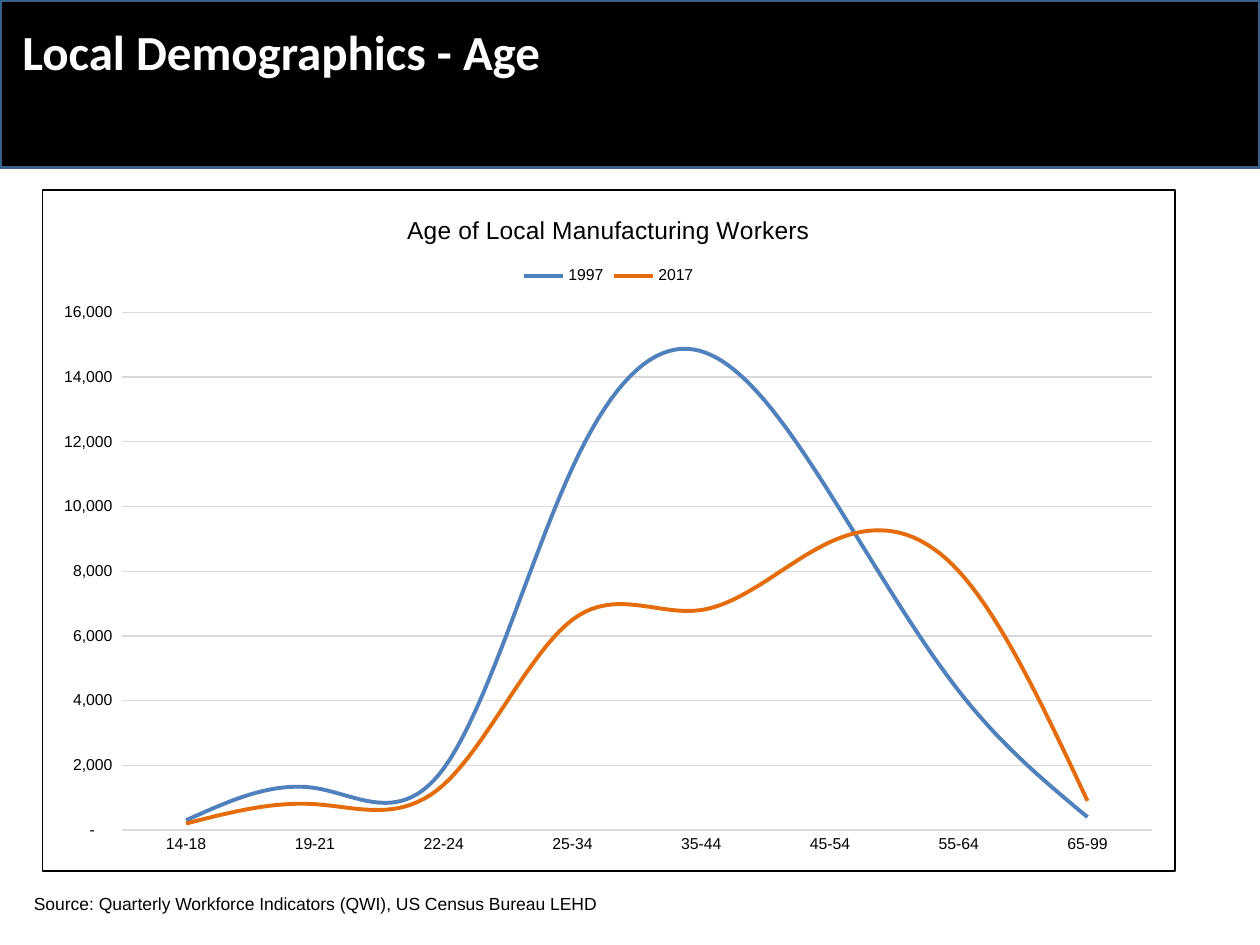
from lxml.etree import SubElement
from pptx import Presentation
from pptx.chart.data import CategoryChartData
from pptx.dml.color import RGBColor
from pptx.enum.chart import XL_CHART_TYPE as ChartType, XL_LEGEND_POSITION as LegendPos
from pptx.enum.chart import XL_MARKER_STYLE as Marker, XL_TICK_MARK as Tick
from pptx.enum.shapes import MSO_SHAPE as Shape
from pptx.enum.text import MSO_ANCHOR as Anchor
from pptx.oxml import parse_xml
from pptx.oxml.ns import nsdecls, qn
from pptx.util import Inches, Pt

COLORS = {"black": "000000", "white": "FFFFFF", "banner_line": "3A5F8C",
          "grid": "D9D9D9", "1997": "4F81BD", "2017": "E46C0A"}
AGES = ["14-18", "19-21", "22-24", "25-34", "35-44", "45-54", "55-64", "65-99"]
WORKERS = {"1997": [300, 1300, 1900, 11200, 14800, 10400, 4300, 400],
           "2017": [200, 800, 1400, 6500, 6800, 8900, 8000, 900]}
COUNT_FORMAT = '_(* #,##0_);_(* \\(#,##0\\);_(* "-"??_);_('
PLOT_LAYOUT = {"x": 0.07, "y": 0.18, "w": 0.91, "h": 0.76}


def rgb(name):
    """Return the named colour."""
    return RGBColor.from_string(COLORS[name])


def set_font(font, size, color="black", name="Arial", bold=False):
    """Apply size, colour, typeface and weight to a font."""
    for attribute, value in {"size": Pt(size), "name": name, "bold": bold}.items():
        setattr(font, attribute, value)
    font.color.rgb = rgb(color)


def set_line(line, color, width):
    """Give a line its colour and width."""
    line.color.rgb = rgb(color)
    line.width = Pt(width)


def add_text(slide, box, text, anchor, **font_format):
    """Place one line of text in a box."""
    frame = slide.shapes.add_textbox(*map(Inches, box)).text_frame
    for attribute, value in {"word_wrap": True, "vertical_anchor": anchor}.items():
        setattr(frame, attribute, value)
    frame.text = text
    set_font(frame.paragraphs[0].runs[0].font, **font_format)


def add_banner(slide, box):
    """Draw the banner with the slide title."""
    left, top, width, height = box
    banner = slide.shapes.add_shape(Shape.RECTANGLE, *map(Inches, box))
    banner.shadow.inherit = False
    banner.fill.solid()
    banner.fill.fore_color.rgb = rgb("black")
    set_line(banner.line, "banner_line", 2)
    add_text(slide, (left + 0.08, top + 0.12, width - 2, height - 0.15),
             "Local Demographics - Age", Anchor.TOP,
             size=28, color="white", name="Calibri", bold=True)


def frame_chart(chart):
    """Give the chart a square white frame and a fixed plot position."""
    space = chart.element
    body = space.find(qn("c:chart"))
    if space.find(qn("c:roundedCorners")) is None:
        space.insert(1, parse_xml(f'<c:roundedCorners {nsdecls("c")} val="0"/>'))
    body.addnext(parse_xml(
        f'<c:spPr {nsdecls("c", "a")}><a:solidFill><a:srgbClr val="{COLORS["white"]}"/></a:solidFill>'
        f'<a:ln w="{Pt(1)}"><a:solidFill><a:srgbClr val="{COLORS["black"]}"/></a:solidFill></a:ln></c:spPr>'))
    plot_area = body.find(qn("c:plotArea"))
    for layout in plot_area.findall(qn("c:layout")):
        plot_area.remove(layout)
    layout = parse_xml(f'<c:layout {nsdecls("c")}/>')
    plot_area.insert(0, layout)
    manual = SubElement(layout, qn("c:manualLayout"))
    settings = {"layoutTarget": "inner", "xMode": "edge", "yMode": "edge", **PLOT_LAYOUT}
    for tag, value in settings.items():
        SubElement(manual, qn(f"c:{tag}")).set("val", str(value))


def add_age_chart(slide, box):
    """Chart the workers by age group for both years."""
    data = CategoryChartData()
    data.categories = AGES
    for year, counts in WORKERS.items():
        data.add_series(year, counts)
    chart = slide.shapes.add_chart(ChartType.LINE, *map(Inches, box), data).chart
    set_font(chart.font, 10)
    title = chart.chart_title.text_frame
    title.text = "Age of Local Manufacturing Workers"
    set_font(title.paragraphs[0].runs[0].font, 14)
    chart.has_legend = True
    for attribute, value in {"position": LegendPos.TOP, "include_in_layout": False}.items():
        setattr(chart.legend, attribute, value)
    set_font(chart.legend.font, 9)

    ages, counts = chart.category_axis, chart.value_axis
    for axis in (ages, counts):
        axis.major_tick_mark = axis.minor_tick_mark = Tick.NONE
        set_font(axis.tick_labels.font, 9)
    set_line(ages.format.line, "grid", 0.75)
    counts.format.line.fill.background()
    set_line(counts.major_gridlines.format.line, "grid", 0.75)
    for attribute, value in {"minimum_scale": 0, "maximum_scale": 16000, "major_unit": 2000}.items():
        setattr(counts, attribute, value)
    for attribute, value in {"number_format": COUNT_FORMAT, "number_format_is_linked": False}.items():
        setattr(counts.tick_labels, attribute, value)

    chart.plots[0].vary_by_categories = False
    for series in chart.plots[0].series:
        series.smooth = True
        series.marker.style = Marker.NONE
        set_line(series.format.line, series.name, 2.25)
    frame_chart(chart)


def add_source(slide, box):
    """Write the source line below the chart."""
    add_text(slide, box, "Source: Quarterly Workforce Indicators (QWI), US Census Bureau LEHD",
             Anchor.BOTTOM, size=10)


def main():
    """Build and save the slide."""
    deck = Presentation()
    deck.slide_width, deck.slide_height = Inches(10), Inches(7.5)
    slide = deck.slides.add_slide(deck.slide_layouts[6])
    add_banner(slide, (0, 0, 10, 1.33))
    add_age_chart(slide, (0.33, 1.5, 9, 5.42))
    add_source(slide, (0.17, 6.78, 8.58, 0.52))
    deck.save("out.pptx")


if __name__ == "__main__":
    main()
